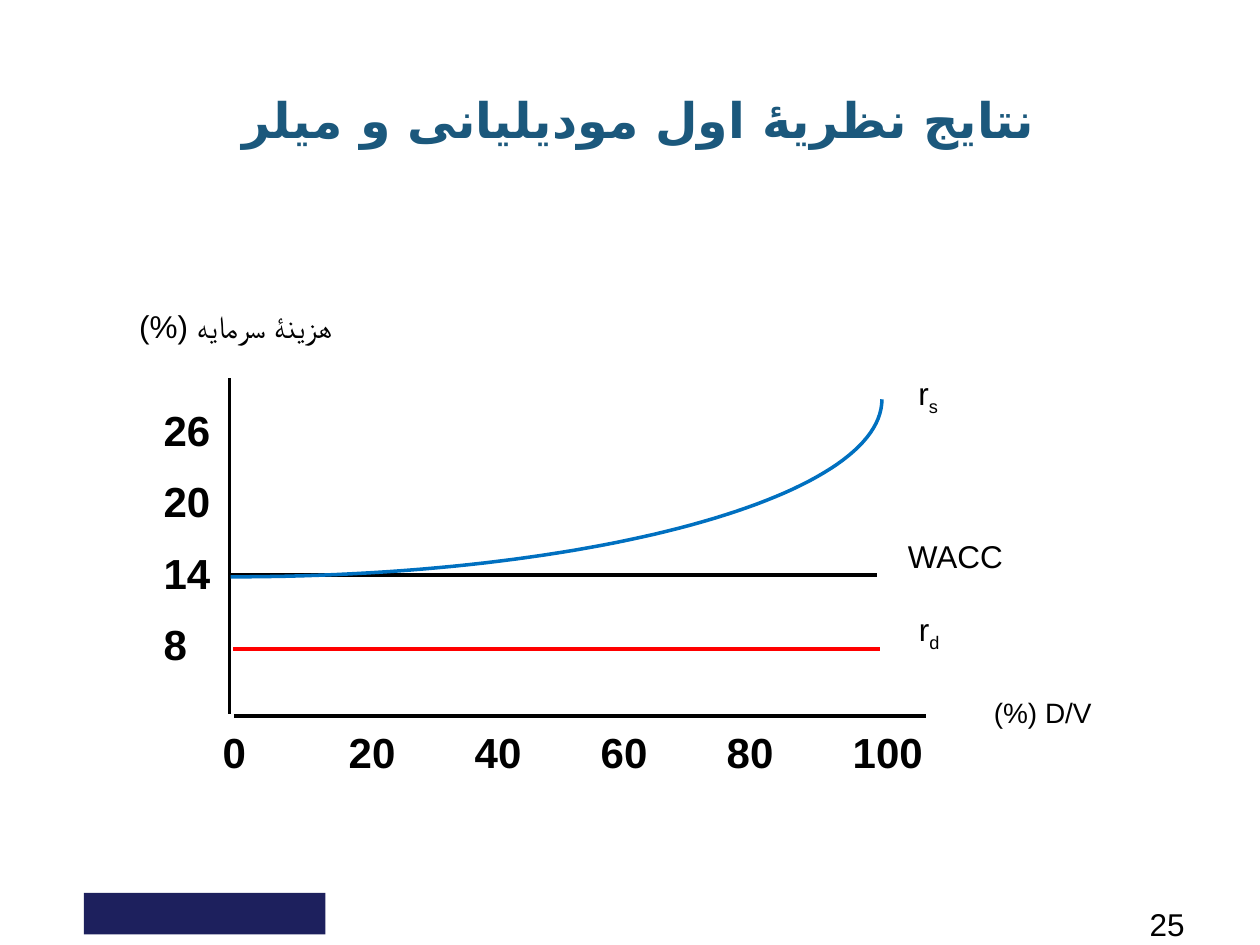
from pptx import Presentation
from pptx import util as u
from pptx.dml.color import RGBColor
from pptx.enum import shapes, text
from pptx.oxml.ns import qn
from lxml import etree

FONT = "Arial"
TITLE_SCRIPT_FONT = "DejaVu Sans"
BLACK = RGBColor(0x00, 0x00, 0x00)
TEAL = RGBColor(0x1B, 0x58, 0x7C)
NAVY = RGBColor(0x1D, 0x20, 0x5D)
RED = RGBColor(0xFF, 0x00, 0x00)
BLUE = RGBColor(0x00, 0x70, 0xC0)
CENTER, LEFT, RIGHT = text.PP_ALIGN.CENTER, text.PP_ALIGN.LEFT, text.PP_ALIGN.RIGHT


def cm_all(*lengths):
    """Turn numbers of centimetres into lengths."""
    return [u.Cm(length) for length in lengths]


def add_run(paragraph, words, size, color=BLACK, bold=False, subscript=False,
            script_font=FONT):
    """Append one formatted run to a paragraph."""
    run = paragraph.add_run()
    run.text = words
    run.font.name = FONT
    run.font.size = u.Pt(size)
    run.font.bold = bold
    run.font.color.rgb = color
    properties = run.font._element
    etree.SubElement(properties, qn("a:cs")).set("typeface", script_font)
    if subscript:
        properties.set("baseline", "-25000")


def set_direction(paragraph, align, rtl=True):
    """Set the alignment and reading direction of a paragraph."""
    paragraph.alignment = align
    paragraph._p.get_or_add_pPr().set("rtl", "1" if rtl else "0")


def add_tabs(paragraph, step, count):
    """Add evenly spaced left tab stops."""
    stops = etree.SubElement(paragraph._p.get_or_add_pPr(), qn("a:tabLst"))
    for number in range(1, count + 1):
        stop = etree.SubElement(stops, qn("a:tab"))
        stop.set("pos", str(u.Cm(step * number)))
        stop.set("algn", "l")


def add_label(slide, box, words, size, align, rtl=True, bold=False,
              subscript="", wrap=True, spacing=None):
    """Add a one-line label with an optional subscript."""
    frame = slide.shapes.add_textbox(*cm_all(*box)).text_frame
    frame.word_wrap = wrap
    paragraph = frame.paragraphs[0]
    set_direction(paragraph, align, rtl)
    if spacing:
        paragraph.line_spacing = spacing
    if "\t" in words:
        add_tabs(paragraph, 2.54, words.count("\t"))
    add_run(paragraph, words, size, bold=bold)
    if subscript:
        add_run(paragraph, subscript, size, subscript=True)


def add_title(slide, words):
    """Place and fill the title placeholder."""
    title = slide.shapes.title
    title.left, title.top, title.width, title.height = cm_all(1.9, 1.4, 21.59, 2)
    title.text_frame.vertical_anchor = text.MSO_ANCHOR.MIDDLE
    paragraph = title.text_frame.paragraphs[0]
    set_direction(paragraph, CENTER)
    add_run(paragraph, words, 28, TEAL, bold=True, script_font=TITLE_SCRIPT_FONT)


def add_footer_bar(slide):
    """Add the plain bar at the bottom left."""
    bar = slide.shapes.add_shape(shapes.MSO_SHAPE.RECTANGLE,
                                 *cm_all(1.69, 18, 4.87, 0.84))
    bar.shadow.inherit = False
    bar.fill.solid()
    bar.fill.fore_color.rgb = NAVY
    bar.line.fill.background()


def add_line(slide, ends, color, width):
    """Add a straight line without shadow."""
    line = slide.shapes.add_connector(shapes.MSO_CONNECTOR.STRAIGHT, *cm_all(*ends))
    line.line.color.rgb = color
    line.line.width = u.Pt(width)
    etree.SubElement(line._element.spPr, qn("a:effectLst"))


def add_curve(slide, controls, color, width, steps=60):
    """Draw a cubic Bezier curve as an open outline."""
    points = []
    for step in range(steps + 1):
        t = step / steps
        weights = ((1 - t) ** 3, 3 * t * (1 - t) ** 2, 3 * t ** 2 * (1 - t), t ** 3)
        points.append(tuple(u.Cm(sum(w * c[axis] for w, c in zip(weights, controls)))
                            for axis in (0, 1)))
    builder = slide.shapes.build_freeform(*points[0])
    builder.add_line_segments(points[1:], close=False)
    curve = builder.convert_to_shape()
    curve.shadow.inherit = False
    curve.fill.background()
    curve.line.color.rgb = color
    curve.line.width = u.Pt(width)


def add_cost_scale(slide, values):
    """Add the vertical scale, one paragraph for each value."""
    frame = slide.shapes.add_textbox(*cm_all(2.54, 8.03, 1.96, 5.89)).text_frame
    frame.word_wrap = True
    frame.margin_left = u.Cm(0.76)
    frame.margin_right = 0
    for index, value in enumerate(values):
        paragraph = frame.add_paragraph() if index else frame.paragraphs[0]
        set_direction(paragraph, LEFT, rtl=False)
        if index:
            paragraph.space_before = u.Pt(12)
        add_run(paragraph, str(value), 24, bold=True)


def main():
    """Build the slide and save it."""
    deck = Presentation()
    deck.slide_width, deck.slide_height = cm_all(25.4, 19.05)
    slide = deck.slides.add_slide(deck.slide_layouts[5])

    add_footer_bar(slide)
    add_title(slide, "نتایج نظریۀ اول مودیلیانی و میلر ")
    add_label(slide, (18.21, 18.11, 5.92, 0.69), "25", 18, RIGHT)

    add_line(slide, (4.63, 7.62, 4.63, 14.4), BLACK, 2)
    add_line(slide, (4.72, 14.43, 18.67, 14.43), BLACK, 2)
    add_label(slide, (0.61, 6.15, 8.28, 0.94), "هزینۀ سرمایه (%)", 18, CENTER, spacing=0.9)
    add_label(slide, (17.78, 13.97, 6.48, 0.86), "D/V (%)", 16, CENTER, spacing=0.9)
    add_cost_scale(slide, (26, 20, 14, 8))
    ratios = "\t".join(str(ratio) for ratio in range(0, 101, 20))
    add_label(slide, (4.24, 14.53, 20.29, 1.27), ratios, 24, LEFT, rtl=False, bold=True)

    add_line(slide, (4.7, 13.08, 17.73, 13.08), RED, 2.25)
    add_line(slide, (4.65, 11.59, 17.68, 11.59), BLACK, 2.25)
    add_curve(slide, ((4.65, 11.63), (11.91, 11.63), (17.78, 10.03), (17.78, 8.05)), BLUE, 2)
    for box, name, subscript in (((18.22, 7.42, 0.94, 1.02), "r", "s"),
                                 ((18.03, 10.71, 2.44, 1.02), "WACC", ""),
                                 ((18.22, 12.18, 0.97, 1.02), "r", "d")):
        add_label(slide, box, name, 18, RIGHT, subscript=subscript, wrap=False)

    deck.save("out.pptx")


if __name__ == "__main__":
    main()
